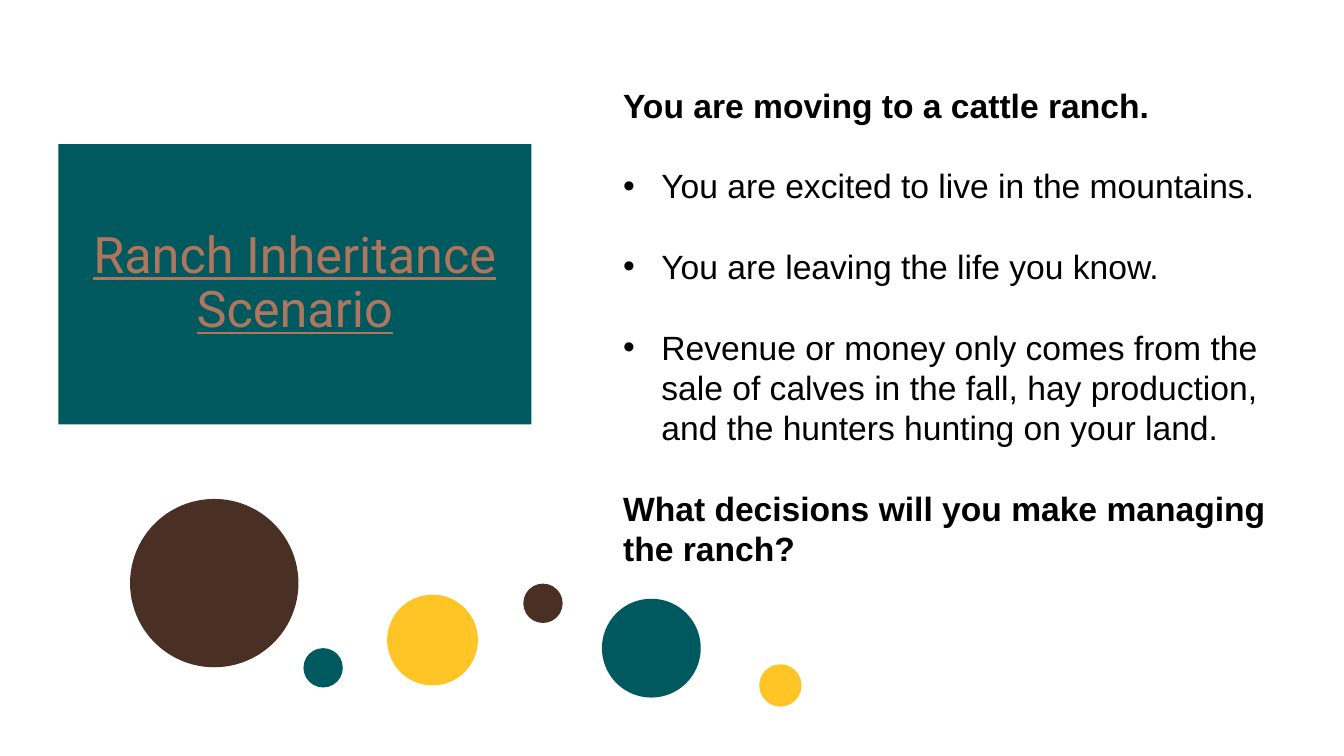
from typing import NamedTuple

from lxml.etree import SubElement
from pptx import Presentation
from pptx.dml.color import RGBColor
from pptx.enum.shapes import MSO_SHAPE
from pptx.enum.text import MSO_ANCHOR, MSO_AUTO_SIZE, PP_ALIGN
from pptx.oxml.ns import qn
from pptx.util import Inches, Pt

COLORS = {
    "teal": "00595F",
    "brown": "492F24",
    "gold": "FFC425",
    "copper": "AF765D",
    "black": "000000",
}
LINE_HEIGHT = Pt(28.8)
BULLET_INDENT = Inches(0.38)


class Dot(NamedTuple):
    left: float
    top: float
    diameter: float
    color: str


class Statement(NamedTuple):
    text: str
    bulleted: bool


DOTS = [
    Dot(1.29, 4.95, 1.67, "brown"),
    Dot(5.97, 5.94, 0.98, "teal"),
    Dot(3.84, 5.9, 0.9, "gold"),
    Dot(3.01, 6.43, 0.39, "teal"),
    Dot(5.19, 5.79, 0.39, "brown"),
    Dot(7.53, 6.59, 0.42, "gold"),
]

STATEMENTS = [
    Statement("You are moving to a cattle ranch.", False),
    Statement("You are excited to live in the mountains.", True),
    Statement("You are leaving the life you know.", True),
    Statement(
        "Revenue or money only comes from the sale of calves in the fall, "
        "hay production, and the hunters hunting on your land.",
        True,
    ),
    Statement("What decisions will you make managing the ranch?", False),
]


def rgb(color: str) -> RGBColor:
    return RGBColor.from_string(COLORS[color])


def place(shape, left: float, top: float, width: float, height: float) -> None:
    shape.left, shape.top = Inches(left), Inches(top)
    shape.width, shape.height = Inches(width), Inches(height)


def fill_solid(shape, color: str) -> None:
    shape.fill.solid()
    shape.fill.fore_color.rgb = rgb(color)


def format_heading(heading) -> None:
    place(heading, 0.58, 1.43, 4.69, 2.78)
    fill_solid(heading, "teal")
    frame = heading.text_frame
    frame.text = "Ranch Inheritance Scenario"
    frame.vertical_anchor = MSO_ANCHOR.MIDDLE
    frame.auto_size = MSO_AUTO_SIZE.NONE
    frame.word_wrap = True
    paragraph = frame.paragraphs[0]
    paragraph.alignment = PP_ALIGN.CENTER
    paragraph.line_spacing = 0.9
    font = paragraph.runs[0].font
    font.name, font.size = "Roboto", Pt(36)
    font.underline = True
    font.color.rgb = rgb("copper")


def set_bullet(paragraph, bulleted: bool) -> None:
    properties = paragraph._p.get_or_add_pPr()
    indent = BULLET_INDENT if bulleted else 0
    properties.set("marL", str(indent))
    properties.set("indent", str(-indent))
    if bulleted:
        SubElement(properties, qn("a:buFont"), typeface="Arial")
        SubElement(properties, qn("a:buChar"), char="•")
    else:
        SubElement(properties, qn("a:buNone"))


def format_scenario(scenario) -> None:
    place(scenario, 6.08, 0.79, 6.67, 4.95)
    frame = scenario.text_frame
    frame.text = "\n".join(statement.text for statement in STATEMENTS)
    frame.vertical_anchor = MSO_ANCHOR.TOP
    frame.auto_size = MSO_AUTO_SIZE.NONE
    frame.word_wrap = True
    for index, (paragraph, statement) in enumerate(zip(frame.paragraphs, STATEMENTS)):
        paragraph.alignment = PP_ALIGN.LEFT
        paragraph.line_spacing = LINE_HEIGHT
        paragraph.space_before = LINE_HEIGHT if index else Pt(0)
        paragraph.space_after = Pt(0)
        set_bullet(paragraph, statement.bulleted)
        font = paragraph.runs[0].font
        font.name, font.size = "Arial", Pt(24)
        font.bold = not statement.bulleted
        font.color.rgb = rgb("black")


def draw_dot(slide, dot: Dot) -> None:
    circle = slide.shapes.add_shape(
        MSO_SHAPE.OVAL,
        Inches(dot.left),
        Inches(dot.top),
        Inches(dot.diameter),
        Inches(dot.diameter),
    )
    fill_solid(circle, dot.color)
    circle.line.fill.background()
    circle.shadow.inherit = False


def main() -> None:
    presentation = Presentation()
    presentation.slide_width = Inches(13.33)
    presentation.slide_height = Inches(7.5)
    slide = presentation.slides.add_slide(presentation.slide_layouts[1])
    format_heading(slide.shapes.title)
    format_scenario(slide.placeholders[1])
    for dot in DOTS:
        draw_dot(slide, dot)
    presentation.save("out.pptx")


if __name__ == "__main__":
    main()
